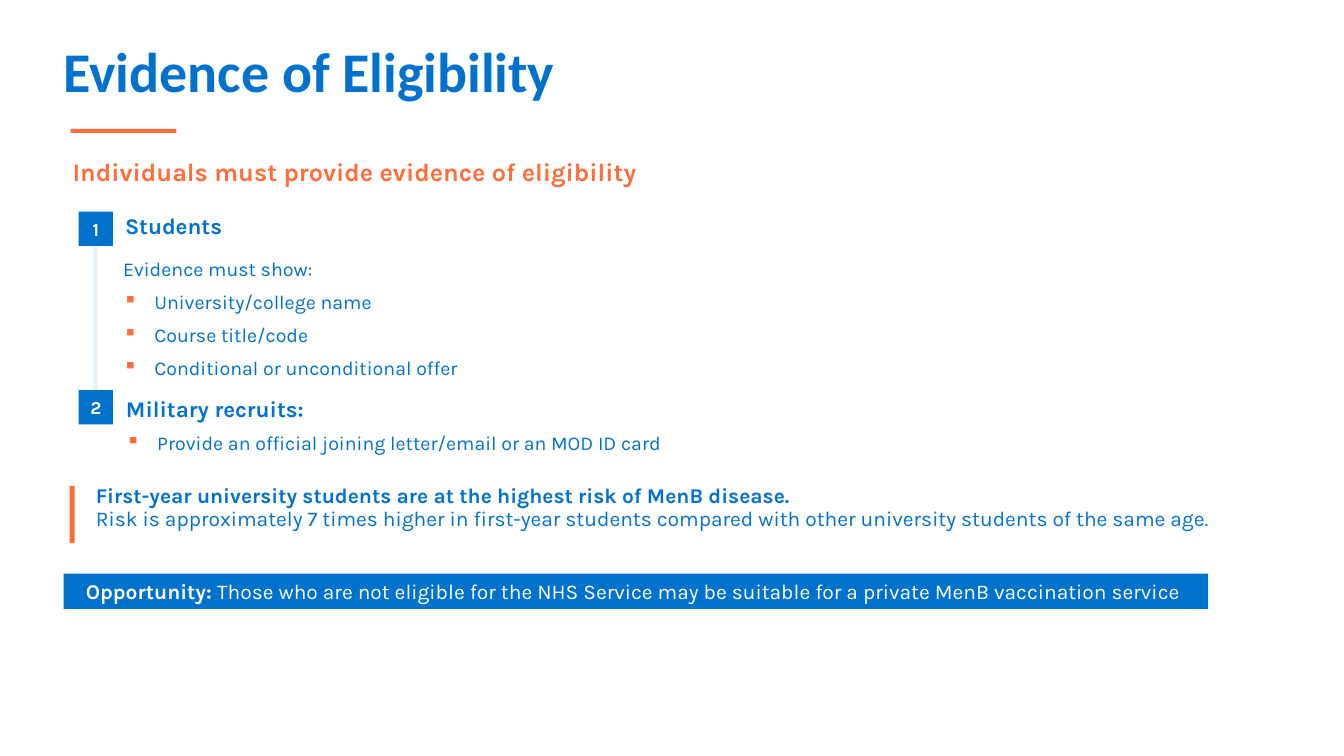
"""Build the slide on evidence of eligibility for MenB vaccination."""
import pptx
import pptx.dml.color
import pptx.enum.shapes
import pptx.enum.text
import pptx.util
from lxml import etree
from pptx.oxml.ns import qn

BLUE = pptx.dml.color.RGBColor(0x00, 0x72, 0xCE)
ORANGE = pptx.dml.color.RGBColor(0xFF, 0x6D, 0x3A)
PALE_BLUE = pptx.dml.color.RGBColor(0xE8, 0xF4, 0xFC)
WHITE = pptx.dml.color.RGBColor(0xFF, 0xFF, 0xFF)

EMU_PER_PX = 9144
BULLET_INDENT = 31
BODY_SPACING = 1.4
CENTER = pptx.enum.text.PP_ALIGN.CENTER
LEFT = pptx.enum.text.PP_ALIGN.LEFT


def px(length):
    """Turn pixels, 100 to the inch, into EMU."""
    return pptx.util.Emu(length * EMU_PER_PX)


def set_margins(frame, left, top, right, bottom):
    """Set the four insets of a text frame."""
    frame.margin_left, frame.margin_top = px(left), px(top)
    frame.margin_right, frame.margin_bottom = px(right), px(bottom)


def style(paragraph, size, color, bold=False, name="Karla"):
    """Set the font shared by the runs of a paragraph."""
    font = paragraph.font
    font.name, font.size, font.bold = name, pptx.util.Pt(size), bold
    font.color.rgb = color


def add_bullet(paragraph):
    """Give a paragraph a hanging orange square."""
    properties = paragraph._p.get_or_add_pPr()
    properties.set("marL", str(px(BULLET_INDENT)))
    properties.set("indent", str(-px(BULLET_INDENT)))
    color = etree.SubElement(properties, qn("a:buClr"))
    etree.SubElement(color, qn("a:srgbClr"), val=str(ORANGE))
    etree.SubElement(properties, qn("a:buChar"), char="▪")


def write(frame, lines, spacing=None):
    """Write (text, size, bold, bulleted) lines in blue."""
    for index, (text, size, bold, bulleted) in enumerate(lines):
        para = frame.add_paragraph() if index else frame.paragraphs[0]
        para.text = text
        if spacing:
            para.line_spacing = spacing
        if bulleted:
            add_bullet(para)
        style(para, size, BLUE, bold)


def add_text(page, left, top, width, height, lines, spacing=None, inset=0):
    """Add a wrapping text box."""
    box = page.shapes.add_textbox(px(left), px(top), px(width), px(height))
    box.text_frame.word_wrap = True
    set_margins(box.text_frame, inset, inset, inset, inset)
    write(box.text_frame, lines, spacing)
    return box


def add_block(page, left, top, width, height, color):
    """Add a plain filled rectangle."""
    block = page.shapes.add_shape(
        pptx.enum.shapes.MSO_SHAPE.RECTANGLE,
        px(left), px(top), px(width), px(height))
    block.shadow.inherit = False
    block.fill.solid()
    block.fill.fore_color.rgb = color
    block.line.fill.background()
    return block


def add_number(page, top, number):
    """Add a numbered step marker."""
    marker = add_block(page, 78, top, 34, 34, BLUE)
    marker.text_frame.vertical_anchor = pptx.enum.text.MSO_ANCHOR.MIDDLE
    para = marker.text_frame.paragraphs[0]
    para.text = str(number)
    para.alignment = CENTER
    style(para, 13, WHITE, True)


def add_title(page, text):
    """Place and format the title."""
    title = page.shapes.title
    title.left, title.top, title.width, title.height = map(px, (63, 36, 890, 55))
    frame = title.text_frame
    frame.auto_size = pptx.enum.text.MSO_AUTO_SIZE.NONE
    frame.vertical_anchor = pptx.enum.text.MSO_ANCHOR.TOP
    set_margins(frame, 0, 0, 0, 0)
    para = frame.paragraphs[0]
    para.text = text
    para.alignment = LEFT
    style(para, 40, BLUE, True, "Calibri")


def add_banner(page, label, message):
    """Add the blue banner with a bold lead-in."""
    banner = add_block(page, 63, 569, 1135, 35, BLUE)
    banner.text_frame.word_wrap = True
    banner.text_frame.vertical_anchor = pptx.enum.text.MSO_ANCHOR.TOP
    para = banner.text_frame.paragraphs[0]
    para.alignment = CENTER
    style(para, 15, WHITE)
    for text, bold in ((label, True), (message, False)):
        span = para.add_run()
        span.text = text
        span.font.bold = bold


def main():
    """Build and save the deck."""
    deck = pptx.Presentation()
    deck.slide_width, deck.slide_height = px(1333), px(750)
    page = deck.slides.add_slide(deck.slide_layouts[5])

    add_title(page, "Evidence of Eligibility")
    add_block(page, 70, 128, 105, 4, ORANGE)
    heading = add_text(page, 72, 155, 810, 35, [
        ("Individuals must provide evidence of eligibility", 18, True, False)])
    heading.text_frame.paragraphs[0].font.color.rgb = ORANGE

    add_block(page, 92, 245, 5, 142, PALE_BLUE)
    for number, top in enumerate((210, 387), start=1):
        add_number(page, top, number)
    add_text(page, 122, 208, 575, 37, [("Students", 16, True, False)], inset=2)
    add_text(page, 122, 246, 575, 45, [
        ("Evidence must show:", 14, False, False),
        ("University/college name", 14, False, True),
        ("Course title/code", 14, False, True),
        ("Conditional or unconditional offer", 14, False, True),
    ], BODY_SPACING)
    add_text(page, 123, 379, 630, 37, [
        ("Military recruits:", 16, True, False),
        ("Provide an official joining letter/email or an MOD ID card", 14, False, True),
    ], BODY_SPACING, inset=2)

    add_block(page, 69, 482, 5, 57, ORANGE)
    add_text(page, 95, 482, 1112, 47, [
        ("First-year university students are at the highest risk of MenB disease.",
         15, True, False),
        ("Risk is approximately 7 times higher in first-year students compared with "
         "other university students of the same age.", 15, False, False),
    ], 0.9)
    add_banner(page, "Opportunity: ",
               "Those who are not eligible for the NHS Service may be suitable "
               "for a private MenB vaccination service ")
    deck.save("out.pptx")


if __name__ == "__main__":
    main()
